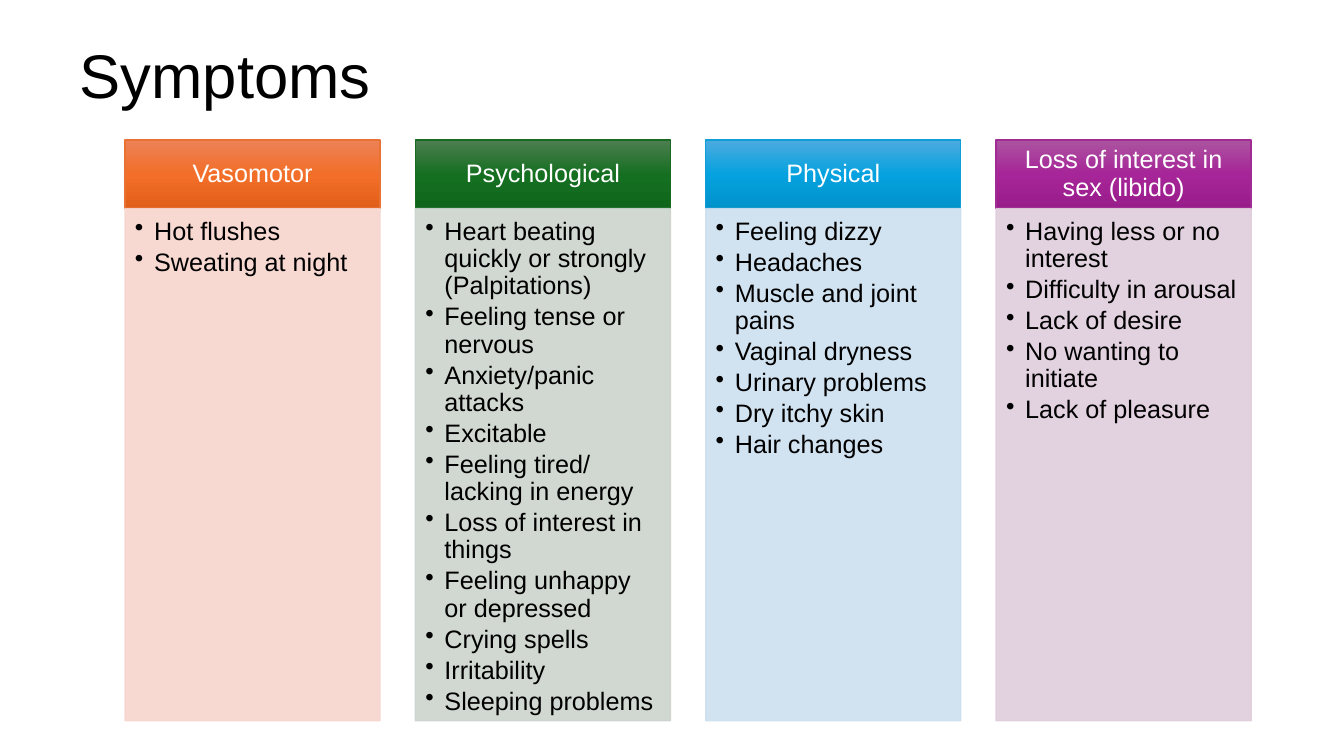
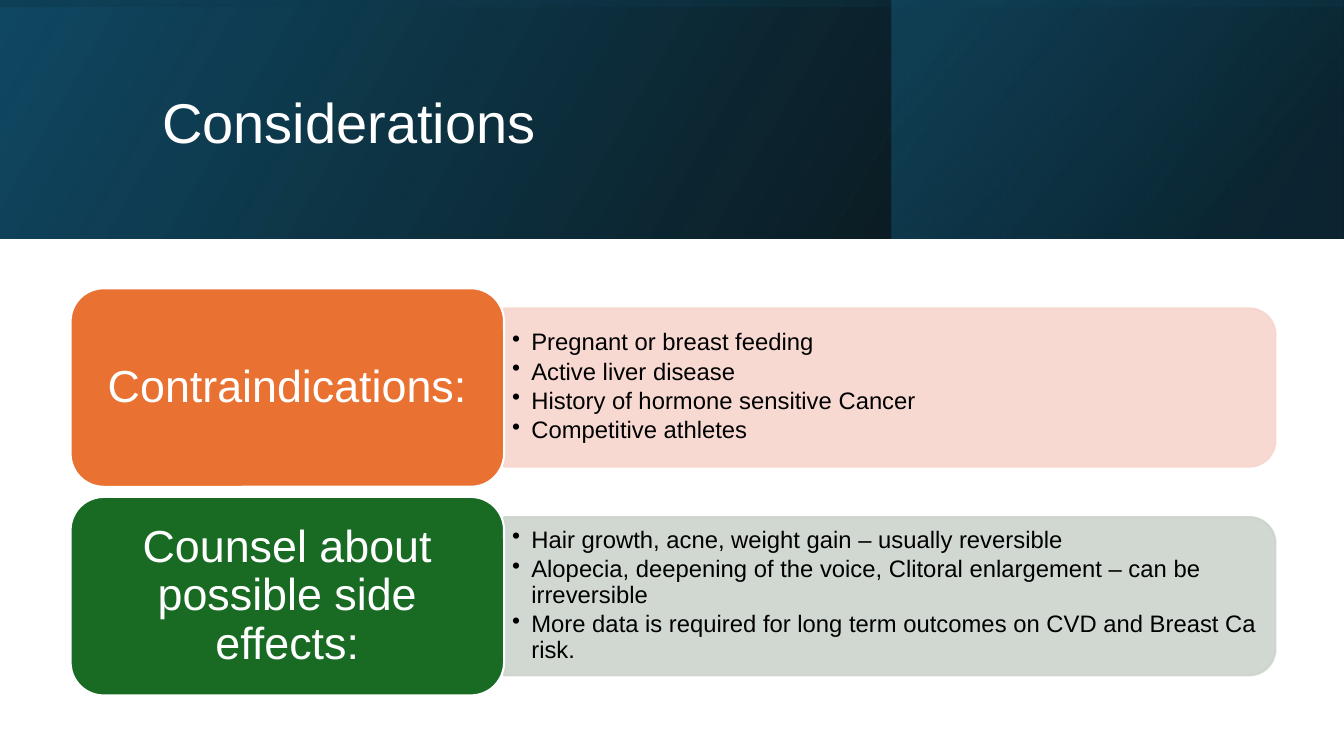
"""Build two slides on symptoms and treatment considerations."""
from dataclasses import dataclass

from lxml import etree
from pptx import Presentation
from pptx.dml.color import RGBColor
from pptx.enum.shapes import MSO_SHAPE
from pptx.enum.text import MSO_ANCHOR, MSO_AUTO_SIZE, PP_ALIGN
from pptx.oxml.ns import qn
from pptx.util import Inches, Pt

RECTANGLE = MSO_SHAPE.RECTANGLE
ROUNDED = MSO_SHAPE.ROUNDED_RECTANGLE
ROUNDED_TOP = MSO_SHAPE.ROUND_2_SAME_RECTANGLE
LEFT, CENTER = PP_ALIGN.LEFT, PP_ALIGN.CENTER
TOP, MIDDLE = MSO_ANCHOR.TOP, MSO_ANCHOR.MIDDLE
NO_AUTOFIT = MSO_AUTO_SIZE.NONE

FONT = "Arial"
COLORS = {
    "white": "FFFFFF",
    "black": "000000",
    "navy": "104862",
    "deep": "0B3041",
    "teal": "156082",
    "orange": "E97132",
    "green": "196B24",
    "blue": "0F9ED5",
    "purple": "A02B93",
    "orange_tint": "F7D5CE",
    "green_tint": "CCD4CD",
    "blue_tint": "CCDFEF",
    "purple_tint": "DFCDDC",
}
HEADER_SHADES = {
    "orange": ("ED8257", "F26E29", "E25F1A"),
    "green": ("4D7E50", "156F21", "0F661B"),
    "blue": ("4CAADF", "05A2DF", "0092CB"),
    "purple": ("AC53A0", "A62598", "991C8B"),
}
SLIDE_WIDTH, SLIDE_HEIGHT, BANNER_HEIGHT = 13.33, 7.5, 2.37
TINT_OPACITY = 90


@dataclass(frozen=True)
class Frame:
    left: float
    top: float
    width: float
    height: float

    def lengths(self) -> tuple:
        return tuple(Inches(value) for value in
                     (self.left, self.top, self.width, self.height))


@dataclass(frozen=True)
class Stop:
    position: int
    color: str
    opacity: int = 100


@dataclass(frozen=True)
class TextStyle:
    size: int
    color: str
    align: int = LEFT
    anchor: int = MIDDLE
    insets: tuple = (0.1, 0.05, 0.1, 0.05)
    after: float = 0
    bulleted: bool = False


@dataclass(frozen=True)
class Topic:
    heading: str
    color: str
    items: tuple


@dataclass(frozen=True)
class BannerLayer:
    frame: Frame
    angle: int
    stops: tuple
    rotation: int = 0


COLUMN_HEADER = TextStyle(18, "white", CENTER, MIDDLE, (0.14, 0.08, 0.14, 0.08))
COLUMN_LIST = TextStyle(18, "black", LEFT, TOP, (0.1, 0.1, 0.14, 0.16), 0.15, True)
ROW_HEADER = TextStyle(32, "white", CENTER, MIDDLE, (0.13, 0.07, 0.13, 0.07))
ROW_LIST = TextStyle(17, "black", LEFT, MIDDLE, (0.07, 0.04, 0.07, 0.04), 0.15, True)

SYMPTOMS = (
    Topic("Vasomotor", "orange", ("Hot flushes", "Sweating at night")),
    Topic("Psychological", "green", (
        "Heart beating quickly or strongly (Palpitations)",
        "Feeling tense or nervous",
        "Anxiety/panic attacks",
        "Excitable",
        "Feeling tired/ lacking in energy",
        "Loss of interest in things",
        "Feeling unhappy or depressed",
        "Crying spells",
        "Irritability",
        "Sleeping problems",
    )),
    Topic("Physical", "blue", (
        "Feeling dizzy",
        "Headaches",
        "Muscle and joint pains",
        "Vaginal dryness",
        "Urinary problems",
        "Dry itchy skin",
        "Hair changes",
    )),
    Topic("Loss of interest in sex (libido)", "purple", (
        "Having less or no interest",
        "Difficulty in arousal",
        "Lack of desire",
        "No wanting to initiate",
        "Lack of pleasure",
    )),
)
CONSIDERATIONS = (
    Topic("Contraindications:", "orange", (
        "Pregnant or breast feeding",
        "Active liver disease",
        "History of hormone sensitive Cancer",
        "Competitive athletes",
    )),
    Topic("Counsel about possible side effects:", "green", (
        "Hair growth, acne, weight gain – usually reversible",
        "Alopecia, deepening of the voice, Clitoral enlargement – can be irreversible",
        "More data is required for long term outcomes on CVD and Breast Ca risk.",
    )),
)
BANNER = (
    BannerLayer(Frame(0, 0, SLIDE_WIDTH, BANNER_HEIGHT), 330,
                (Stop(0, "black", 96), Stop(100, "navy"))),
    BannerLayer(Frame(8.84, 0, 4.48, BANNER_HEIGHT), 320,
                (Stop(19, "deep", 68), Stop(100, "teal", 48))),
    BannerLayer(Frame(5.48, -5.48, BANNER_HEIGHT, SLIDE_WIDTH), 350,
                (Stop(23, "navy", 16), Stop(99, "black", 45)), 270),
)


def rgb(name: str) -> RGBColor:
    return RGBColor.from_string(COLORS[name])


def add_opacity(color_element, opacity: int) -> None:
    alpha = etree.SubElement(color_element, qn("a:alpha"))
    alpha.set("val", str(opacity * 1000))


def add_panel(page, kind, frame: Frame, fill=None, line=None, weight=1.0):
    shape = page.shapes.add_shape(kind, *frame.lengths())
    shape.shadow.inherit = False
    if fill:
        shape.fill.solid()
        shape.fill.fore_color.rgb = rgb(fill)
    if line:
        shape.line.color.rgb = rgb(line)
        shape.line.width = Pt(weight)
    else:
        shape.line.fill.background()
    return shape


def add_tinted_panel(page, kind, frame: Frame, color: str, weight: float):
    tint = f"{color}_tint"
    shape = add_panel(page, kind, frame, tint, tint, weight)
    for element in list(shape._element.spPr.iter(qn("a:srgbClr"))):
        add_opacity(element, TINT_OPACITY)
    return shape


def fill_gradient(shape, angle: int, stops) -> None:
    shape.fill.background()
    gradient = etree.Element(qn("a:gradFill"))
    stop_list = etree.SubElement(gradient, qn("a:gsLst"))
    for stop in stops:
        entry = etree.SubElement(stop_list, qn("a:gs"), pos=str(stop.position * 1000))
        color = etree.SubElement(entry, qn("a:srgbClr"),
                                 val=COLORS.get(stop.color, stop.color))
        if stop.opacity < 100:
            add_opacity(color, stop.opacity)
    etree.SubElement(gradient, qn("a:lin"), ang=str(angle * 60000), scaled="0")
    properties = shape._element.spPr
    properties.replace(properties.find(qn("a:noFill")), gradient)


def add_bullet(para) -> None:
    properties = para._p.get_or_add_pPr()
    properties.set("marL", str(Inches(0.19)))
    properties.set("indent", str(-Inches(0.19)))
    etree.SubElement(properties, qn("a:buChar"), char="•")


def write_text(shape, lines, style: TextStyle) -> None:
    text_frame = shape.text_frame
    text_frame.text = "\n".join(lines)
    text_frame.word_wrap = True
    text_frame.auto_size = NO_AUTOFIT
    text_frame.vertical_anchor = style.anchor
    (text_frame.margin_left, text_frame.margin_top, text_frame.margin_right,
     text_frame.margin_bottom) = (Inches(inset) for inset in style.insets)
    for para in text_frame.paragraphs:
        para.alignment = style.align
        para.line_spacing = 0.9
        para.space_before = Pt(0)
        para.space_after = Pt(style.size * style.after)
        if style.bulleted:
            add_bullet(para)
        for span in para.runs:
            span.font.name = FONT
            span.font.size = Pt(style.size)
            span.font.color.rgb = rgb(style.color)


def place_title(page, text: str, frame: Frame, style: TextStyle) -> None:
    title = page.shapes.title
    title.left, title.top, title.width, title.height = frame.lengths()
    write_text(title, (text,), style)
    title._element.getparent().append(title._element)


def draw_column(page, index: int, topic: Topic) -> None:
    left, top, width, header_height = 1.24 + 2.88 * index, 1.39, 2.53, 0.68
    header = add_panel(page, RECTANGLE, Frame(left, top, width, header_height),
                       line=topic.color)
    shades = HEADER_SHADES[topic.color]
    fill_gradient(header, 90, [Stop(50 * step, shade)
                               for step, shade in enumerate(shades)])
    write_text(header, (topic.heading,), COLUMN_HEADER)
    body = add_tinted_panel(page, RECTANGLE,
                            Frame(left, top + header_height, width, 5.08),
                            topic.color, 1)
    write_text(body, topic.items, COLUMN_LIST)


def draw_banner_layer(page, layer: BannerLayer) -> None:
    shape = add_panel(page, RECTANGLE, layer.frame)
    fill_gradient(shape, layer.angle, layer.stops)
    shape.rotation = layer.rotation
    shape._element.spPr.find(qn("a:xfrm")).set("flipH", "1")


def draw_row(page, index: int, topic: Topic) -> None:
    top = 2.86 + 2.07 * index
    body_left, body_width, body_height = 5.0, 7.65, 1.57
    body_top = top + 0.2
    shift = (body_width - body_height) / 2
    body = add_tinted_panel(
        page, ROUNDED_TOP,
        Frame(body_left + shift, body_top - shift, body_height, body_width),
        topic.color, 1.5)
    body.rotation = 90
    text_area = Frame(body_left + 0.01, top + 0.27, 7.57, 1.42)
    text_box = page.shapes.add_textbox(*text_area.lengths())
    write_text(text_box, topic.items, ROW_LIST)
    header = add_panel(page, ROUNDED, Frame(0.7, top, 4.3, 1.97),
                       topic.color, "white", 1.5)
    write_text(header, (topic.heading,), ROW_HEADER)


def build_symptoms(deck) -> None:
    page = deck.slides.add_slide(deck.slide_layouts[5])
    place_title(page, "Symptoms", Frame(0.69, 0.05, 11.5, 1.45),
                TextStyle(44, "black"))
    for index, topic in enumerate(SYMPTOMS):
        draw_column(page, index, topic)


def build_considerations(deck) -> None:
    page = deck.slides.add_slide(deck.slide_layouts[5])
    for layer in BANNER:
        draw_banner_layer(page, layer)
    place_title(page, "Considerations", Frame(1.51, 0.38, 10.63, 1.72),
                TextStyle(40, "white"))
    for index, topic in enumerate(CONSIDERATIONS):
        draw_row(page, index, topic)


def main() -> None:
    deck = Presentation()
    deck.slide_width, deck.slide_height = Inches(SLIDE_WIDTH), Inches(SLIDE_HEIGHT)
    build_symptoms(deck)
    build_considerations(deck)
    deck.save("out.pptx")


if __name__ == "__main__":
    main()
